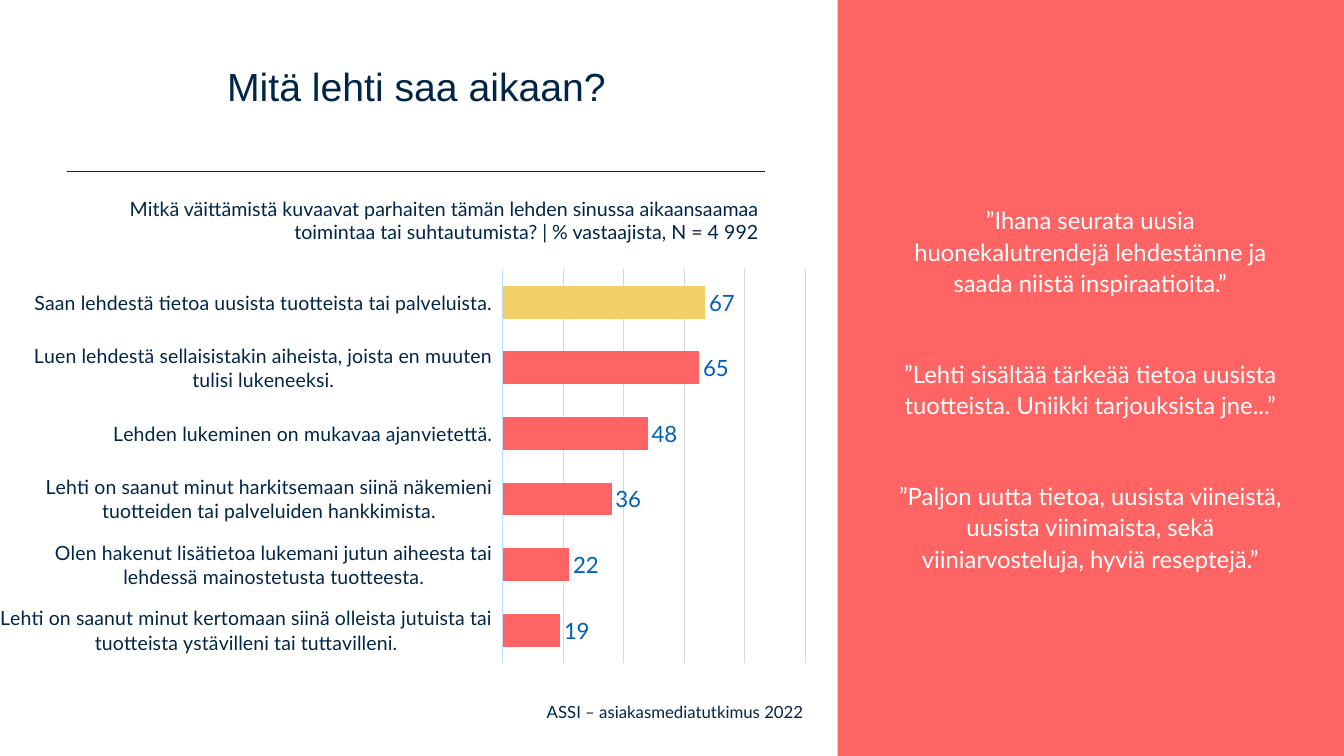
from dataclasses import dataclass

from lxml import etree
from pptx import Presentation
from pptx.chart.data import CategoryChartData
from pptx.dml.color import RGBColor
from pptx.enum.chart import XL_CHART_TYPE, XL_LABEL_POSITION, XL_TICK_LABEL_POSITION, XL_TICK_MARK
from pptx.enum.shapes import MSO_CONNECTOR, MSO_SHAPE
from pptx.enum.text import MSO_ANCHOR, PP_ALIGN
from pptx.oxml import parse_xml
from pptx.oxml.ns import nsdecls, qn
from pptx.util import Cm, Pt

BAR_CLUSTERED = XL_CHART_TYPE.BAR_CLUSTERED
OUTSIDE_END = XL_LABEL_POSITION.OUTSIDE_END
LABELS_LOW = XL_TICK_LABEL_POSITION.LOW
NO_TICKS = XL_TICK_MARK.NONE
STRAIGHT = MSO_CONNECTOR.STRAIGHT
RECTANGLE = MSO_SHAPE.RECTANGLE
TOP, MIDDLE = MSO_ANCHOR.TOP, MSO_ANCHOR.MIDDLE
CENTER, RIGHT = PP_ALIGN.CENTER, PP_ALIGN.RIGHT

NAVY, CORAL, YELLOW, BLUE = "002548", "FF6464", "F3CF67", "005FB6"
WHITE, PALE_BLUE, GREY = "FFFFFF", "BDE0FF", "D9D9D9"


@dataclass
class TextBlock:
    left: float
    top: float
    width: float
    height: float
    paragraphs: list[str]
    size: float
    font: str = "Lato"
    color: str = NAVY
    align: PP_ALIGN = CENTER
    anchor: MSO_ANCHOR = MIDDLE
    line_spacing: float = 1.0
    gap: float = 0


@dataclass
class Statement:
    label: str
    percent: int
    color: str = CORAL


FOOTER = TextBlock(0.08, 17.75, 33.87, 0.46, ["ASSI – asiakasmediatutkimus 2022"], 12,
                   line_spacing=0.9)
TITLE = TextBlock(1.68, 0.15, 17.63, 4.17, ["Mitä lehti saa aikaan?"], 28,
                  font="Arial", line_spacing=0.9)
QUOTES = TextBlock(
    22.4, 4.32, 10.16, 10.92,
    ["”Ihana seurata uusia huonekalutrendejä lehdestänne ja saada niistä inspiraatioita.”",
     "”Lehti sisältää tärkeää tietoa uusista tuotteista. Uniikki tarjouksista jne...”",
     "”Paljon uutta tietoa, uusista viineistä, uusista viinimaista, sekä viiniarvosteluja, "
     "hyviä reseptejä.”"],
    17, color=WHITE, line_spacing=1.1, gap=42.4)
QUESTION = TextBlock(
    1.75, 4.83, 17.63, 1.45,
    ["Mitkä väittämistä kuvaavat parhaiten tämän lehden sinussa aikaansaamaa toimintaa "
     "tai suhtautumista? | % vastaajista, N = 4 992"],
    14, align=RIGHT, anchor=TOP)

STATEMENTS = [
    Statement("Saan lehdestä tietoa uusista tuotteista tai palveluista.", 67, YELLOW),
    Statement("Luen lehdestä sellaisistakin aiheista, joista en muuten tulisi lukeneeksi.", 65),
    Statement("Lehden lukeminen on mukavaa ajanvietettä.", 48),
    Statement("Lehti on saanut minut harkitsemaan siinä näkemieni tuotteiden tai palveluiden "
              "hankkimista.", 36),
    Statement("Olen hakenut lisätietoa lukemani jutun aiheesta tai lehdessä mainostetusta "
              "tuotteesta.", 22),
    Statement("Lehti on saanut minut kertomaan siinä olleista jutuista tai tuotteista "
              "ystävilleni tai tuttavilleni.", 19),
]
PLOT_AREA = {"x": 0.513, "y": 0.131, "w": 0.314, "h": 0.807}


def rgb(color: str) -> RGBColor:
    return RGBColor.from_string(color)


def style_font(font, size: float, color: str, name: str = "Lato") -> None:
    font.size, font.name = Pt(size), name
    font.color.rgb = rgb(color)


def style_line(line, color: str, width: float) -> None:
    line.color.rgb = rgb(color)
    line.width = Pt(width)


def add_text(page, block: TextBlock) -> None:
    box = page.shapes.add_textbox(Cm(block.left), Cm(block.top), Cm(block.width), Cm(block.height))
    frame = box.text_frame
    frame.word_wrap = True
    frame.vertical_anchor = block.anchor
    frame.text = "\n".join(block.paragraphs)
    for index, para in enumerate(frame.paragraphs):
        para.alignment = block.align
        para.line_spacing = block.line_spacing
        if index:
            para.space_before = Pt(block.gap)
        for span in para.runs:
            style_font(span.font, block.size, block.color, block.font)


def add_panel(page) -> None:
    panel = page.shapes.add_shape(RECTANGLE, Cm(21.11), 0, Cm(12.76), Cm(19.05))
    panel.shadow.inherit = False
    panel.fill.solid()
    panel.fill.fore_color.rgb = rgb(CORAL)
    panel.line.fill.background()


def add_rule(page) -> None:
    rule = page.shapes.add_connector(STRAIGHT, Cm(1.68), Cm(4.32), Cm(19.28), Cm(4.32))
    style_line(rule.line, NAVY, 1)
    etree.SubElement(rule.element.spPr, qn("a:effectLst"))


def place_plot(chart) -> None:
    plot_area = chart.element.find(".//" + qn("c:plotArea"))
    for layout in plot_area.findall(qn("c:layout")):
        plot_area.remove(layout)
    modes = "".join(f'<c:{axis}Mode val="edge"/>' for axis in "xy")
    sizes = "".join(f'<c:{side} val="{share}"/>' for side, share in PLOT_AREA.items())
    plot_area.insert(0, parse_xml(
        f'<c:layout {nsdecls("c")}><c:manualLayout><c:layoutTarget val="inner"/>'
        f"{modes}{sizes}</c:manualLayout></c:layout>"))


def add_statement_chart(page, statements: list[Statement]) -> None:
    chart_data = CategoryChartData()
    chart_data.categories = [statement.label for statement in statements]
    chart_data.add_series("Series 1", [statement.percent for statement in statements])
    chart = page.shapes.add_chart(
        BAR_CLUSTERED, 0, Cm(5.18), Cm(24.49), Cm(12.29), chart_data).chart
    chart.has_title = chart.has_legend = False
    style_font(chart.font, 10, NAVY, "Calibri")
    place_plot(chart)

    # Axes
    category_axis, value_axis = chart.category_axis, chart.value_axis
    category_axis.reverse_order = True
    category_axis.major_tick_mark = category_axis.minor_tick_mark = NO_TICKS
    category_axis.tick_label_position = LABELS_LOW
    style_font(category_axis.tick_labels.font, 14, NAVY)
    style_line(category_axis.format.line, PALE_BLUE, 0.75)
    value_axis.visible = False
    value_axis.minimum_scale, value_axis.maximum_scale = 0, 100
    value_axis.major_unit = 20
    value_axis.has_major_gridlines = True
    style_line(value_axis.major_gridlines.format.line, GREY, 0.75)

    # Bars and their values
    plot = chart.plots[0]
    plot.gap_width = 100
    plot.vary_by_categories = False
    series = plot.series[0]
    series.invert_if_negative = False
    for index, statement in enumerate(statements):
        fill = series.points[index].format.fill
        fill.solid()
        fill.fore_color.rgb = rgb(statement.color)
    labels = series.data_labels
    labels.show_value = True
    labels.position = OUTSIDE_END
    labels.number_format, labels.number_format_is_linked = "#,##0", False
    style_font(labels.font, 16, BLUE)


def main() -> None:
    deck = Presentation()
    deck.slide_width, deck.slide_height = Cm(33.87), Cm(19.05)
    page = deck.slides.add_slide(deck.slide_layouts[6])

    # Frame of the page
    add_text(page, FOOTER)
    add_panel(page)
    add_rule(page)

    # Content
    for block in (TITLE, QUOTES, QUESTION):
        add_text(page, block)
    add_statement_chart(page, STATEMENTS)
    deck.save("out.pptx")


if __name__ == "__main__":
    main()
